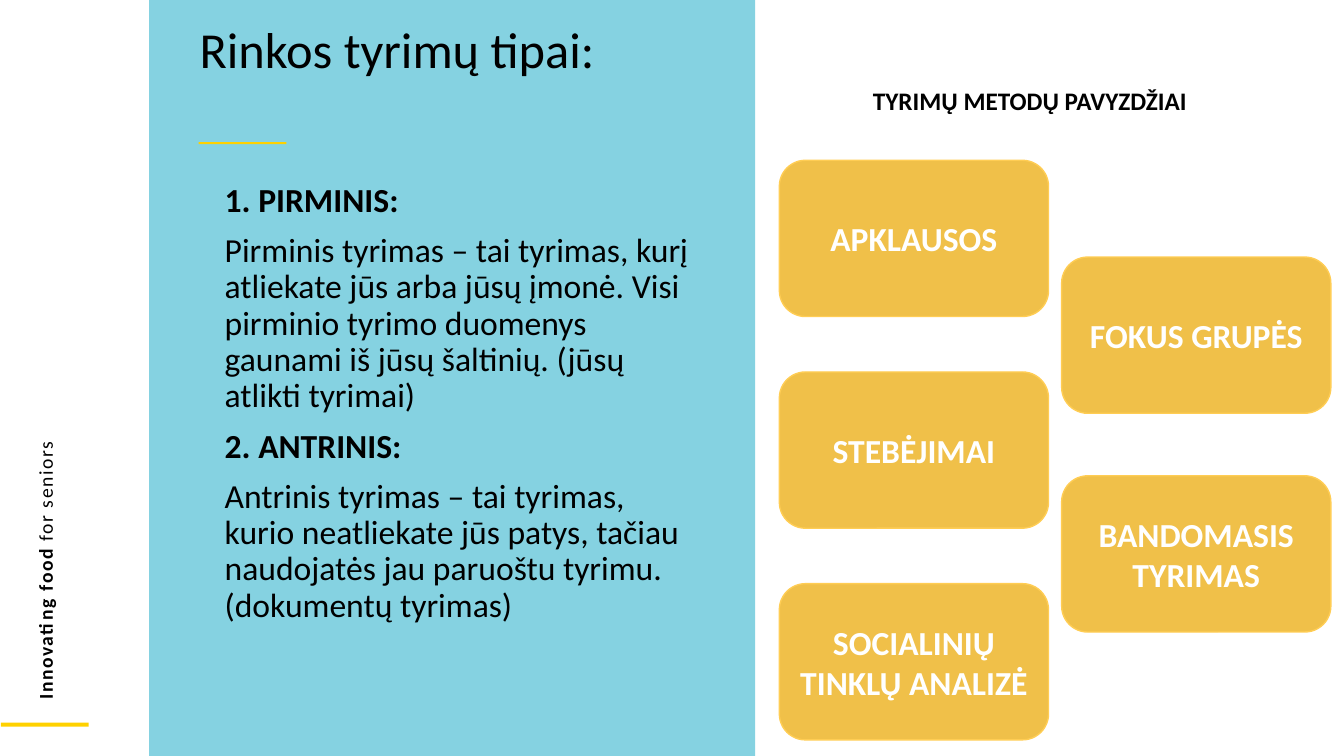
from dataclasses import dataclass

from lxml.etree import SubElement
from pptx import Presentation
from pptx.dml.color import RGBColor
from pptx.enum.shapes import MSO_SHAPE
from pptx.enum.text import MSO_ANCHOR, MSO_AUTO_SIZE, PP_ALIGN
from pptx.oxml.ns import qn
from pptx.util import Inches, Pt

BLACK = RGBColor(0x00, 0x00, 0x00)
WHITE = RGBColor(0xFF, 0xFF, 0xFF)
TEAL = RGBColor(0x85, 0xD2, 0xE1)
YELLOW = RGBColor(0xFF, 0xD1, 0x00)
AMBER = RGBColor(0xF0, 0xC0, 0x49)
AMBER_EDGE = RGBColor(0xFF, 0xCD, 0x54)

FONT = "Calibri"
SLIDE_WIDTH, SLIDE_HEIGHT = 13.33, 7.5

RESEARCH_TYPES = [
    ("1. PIRMINIS:", True),
    ("Pirminis tyrimas – tai tyrimas, kurį atliekate jūs arba jūsų įmonė. "
     "Visi pirminio tyrimo duomenys gaunami iš jūsų šaltinių. "
     "(jūsų atlikti tyrimai)", False),
    ("2. ANTRINIS:", True),
    ("Antrinis tyrimas – tai tyrimas, kurio neatliekate jūs patys, tačiau "
     "naudojatės jau paruoštu tyrimu. (dokumentų tyrimas)", False),
]
METHOD_COLUMNS = [
    (0.79, 2.1, ["APKLAUSOS", "STEBĖJIMAI", "SOCIALINIŲ TINKLŲ ANALIZĖ"]),
    (1.75, 2.17, ["FOKUS GRUPĖS", "BANDOMASIS TYRIMAS"]),
]


@dataclass
class Box:
    left: float
    top: float
    width: float
    height: float

    def inside(self, left, top, width, height):
        return Box(self.left + left, self.top + top, width, height)

    def lengths(self):
        return [Inches(v) for v in (self.left, self.top, self.width, self.height)]


def add_span(para, text, size, color=BLACK, bold=False):
    span = para.add_run()
    span.text = text
    span.font.name = FONT
    span.font.size = Pt(size)
    span.font.bold = bold
    span.font.color.rgb = color
    return span


def add_block(page, box, color, kind=MSO_SHAPE.RECTANGLE):
    block = page.shapes.add_shape(kind, *box.lengths())
    block.shadow.inherit = False
    block.fill.solid()
    block.fill.fore_color.rgb = color
    block.line.fill.background()
    return block


def add_text_box(page, box):
    text_box = page.shapes.add_textbox(*box.lengths())
    text_box.text_frame.word_wrap = True
    return text_box


def space_lines(para):
    para.line_spacing = 0.9
    para.space_before = Pt(10)


def place_title(page, box):
    title = page.shapes.title
    title.left, title.top, title.width, title.height = box.lengths()
    title.element.getparent().append(title.element)
    frame = title.text_frame
    frame.word_wrap = True
    frame.auto_size = MSO_AUTO_SIZE.NONE
    frame.vertical_anchor = MSO_ANCHOR.TOP
    para = frame.paragraphs[0]
    para.alignment = PP_ALIGN.LEFT
    space_lines(para)
    add_span(para, "Rinkos tyrimų tipai:", 36)


def draw_side_strip(page, box):
    add_block(page, box.inside(0.01, 7.17, 0.87, 0.04), YELLOW)
    length, thickness = 7.54, 0.34
    motto_box = box.inside(0.45 - length / 2, 3.27 - thickness / 2, length, thickness)
    motto = add_text_box(page, motto_box)
    motto.rotation = 270
    para = motto.text_frame.paragraphs[0]
    for text, bold in (("Innovating food ", True), ("for seniors", False)):
        span = add_span(para, text, 14, bold=bold)
        span.font._element.set("spc", "110")


def draw_types_panel(page, box):
    add_block(page, box, TEAL)
    add_block(page, box.inside(0.49, 1.41, 0.87, 0.02), YELLOW)
    place_title(page, box.inside(0.4, 0.2, 5.16, 1.28))
    frame = add_text_box(page, box.inside(0.4, 1.77, 5.05, 4.95)).text_frame
    for index, (text, bold) in enumerate(RESEARCH_TYPES):
        para = frame.paragraphs[0] if index == 0 else frame.add_paragraph()
        space_lines(para)
        properties = para._p.get_or_add_pPr()
        properties.set("marL", str(Inches(0.25)))
        properties.set("indent", "0")
        add_span(para, text, 24, bold=bold)


def draw_method_card(page, box, label):
    card = add_block(page, box, AMBER, MSO_SHAPE.FLOWCHART_ALTERNATE_PROCESS)
    card.line.color.rgb = AMBER_EDGE
    card.line.width = Pt(1)
    frame = card.text_frame
    frame.word_wrap = True
    frame.vertical_anchor = MSO_ANCHOR.MIDDLE
    para = frame.paragraphs[0]
    para.alignment = PP_ALIGN.CENTER
    add_span(para, label, 24, WHITE, True)


def draw_methods(page, box):
    heading = add_text_box(page, box.inside(0.83, 0, 3.94, 0.4))
    add_span(heading.text_frame.paragraphs[0], "TYRIMŲ METODŲ PAVYZDŽIAI", 18, bold=True)
    for column, (first_top, row_step, labels) in enumerate(METHOD_COLUMNS):
        for row, label in enumerate(labels):
            card_box = box.inside(column * 2.8, first_top + row * row_step, 2.67, 1.55)
            draw_method_card(page, card_box, label)


def main():
    deck = Presentation()
    deck.slide_width = Inches(SLIDE_WIDTH)
    deck.slide_height = Inches(SLIDE_HEIGHT)
    page = deck.slides.add_slide(deck.slide_layouts[5])
    draw_side_strip(page, Box(0, 0, 1.48, SLIDE_HEIGHT))
    draw_types_panel(page, Box(1.48, 0, 6.01, SLIDE_HEIGHT))
    draw_methods(page, Box(7.73, 0.8, 5.47, 6.53))
    deck.save("out.pptx")


if __name__ == "__main__":
    main()
